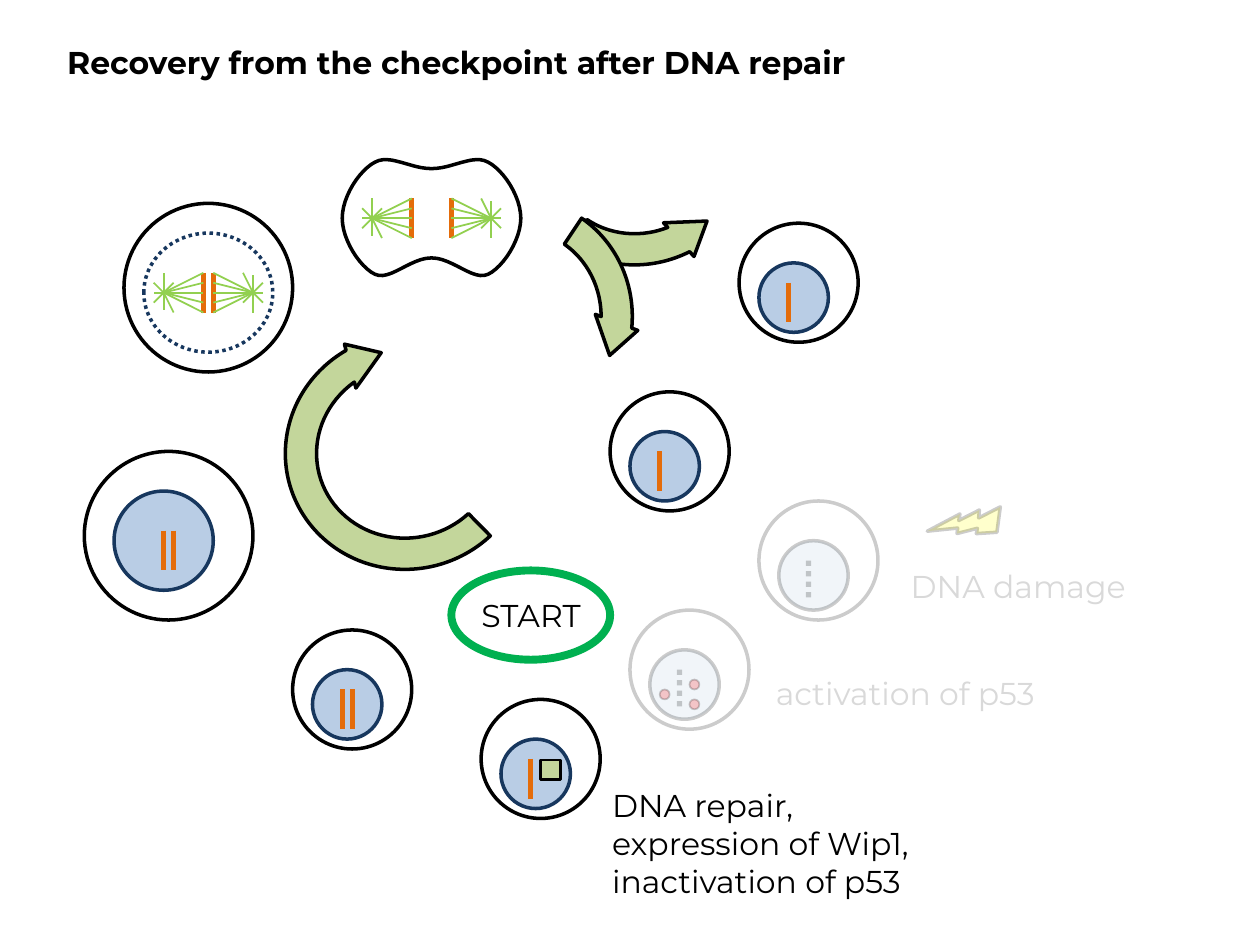
from lxml import etree
from pptx import Presentation
from pptx.dml.color import RGBColor
from pptx.enum.dml import MSO_LINE
from pptx.enum.shapes import MSO_CONNECTOR, MSO_SHAPE
from pptx.enum.text import MSO_ANCHOR, MSO_AUTO_SIZE, PP_ALIGN
from pptx.oxml.ns import qn
from pptx.util import Cm, Pt

STRAIGHT = MSO_CONNECTOR.STRAIGHT
ELLIPSE = MSO_SHAPE.OVAL
SQUARE = MSO_SHAPE.RECTANGLE
BOLT = MSO_SHAPE.LIGHTNING_BOLT
CIRCULAR_ARROW = MSO_SHAPE.CIRCULAR_ARROW
DOTTED = MSO_LINE.ROUND_DOT
LEFT = PP_ALIGN.LEFT
CENTER = PP_ALIGN.CENTER
MIDDLE = MSO_ANCHOR.MIDDLE
TOP = MSO_ANCHOR.TOP
NO_FIT = MSO_AUTO_SIZE.NONE

BLACK = "000000"
WHITE = "FFFFFF"
GREEN = "C3D69B"
ORANGE = "E46C0A"
FIBER = "92D050"
NUCLEUS = "B9CDE5"
NAVY = "17375E"
PALE = "D9D9D9"
FADED = 20

ASTER = [(0.8, 0), (0.8, 0.2), (0.8, -0.2), (0.8, 0.4), (0.8, -0.4), (0, 0.35),
         (-0.2, 0), (0.2, 0.4), (-0.2, 0.2), (-0.2, -0.2), (0, -0.4), (0.2, -0.2)]
CLEAVAGE_CENTER = 8.7
CLEAVAGE_HALF = [(0, 3.4), (-0.43, 3.4), (-0.84, 3.1), (-1.14, 3.27), (-1.45, 3.43),
                 (-1.8, 3.96), (-1.8, 4.4), (-1.8, 4.83), (-1.45, 5.38),
                 (-1.14, 5.53), (-0.84, 5.67), (-0.43, 5.2), (0, 5.2)]


def paint(color_format, color, opacity=100):
    color_format.rgb = RGBColor.from_string(color)
    if opacity < 100:
        node = color_format._xFill.find(qn("a:srgbClr"))
        etree.SubElement(node, qn("a:alpha")).set("val", str(opacity * 1000))


def write(frame, text, color=BLACK, bold=False, align=LEFT, anchor=TOP, wrap=False):
    frame.auto_size = NO_FIT
    frame.word_wrap = wrap
    frame.vertical_anchor = anchor
    frame.text = text
    for paragraph in frame.paragraphs:
        paragraph.alignment = align
        font = paragraph.runs[0].font
        font.name, font.size, font.bold = "Montserrat", Pt(18), bold
        paint(font.color, color)


def place(shape, left, top, width, height):
    shape.left, shape.top = Cm(left), Cm(top)
    shape.width, shape.height = Cm(width), Cm(height)


def curve_points(controls, steps=12):
    points = []
    for first in range(0, len(controls) - 1, 3):
        a, b, c, d = controls[first:first + 4]
        for step in range(1, steps + 1):
            t = step / steps
            s = 1 - t
            points.append(tuple(
                s**3 * a[axis] + 3 * s * s * t * b[axis] + 3 * s * t * t * c[axis] + t**3 * d[axis]
                for axis in (0, 1)))
    return points


class CellCycleDiagram:
    def __init__(self, slide):
        self.slide = slide
        self.shapes = slide.shapes

    def title(self, text, left, top, width, height):
        shape = self.shapes.title
        place(shape, left, top, width, height)
        write(shape.text_frame, text, bold=True, anchor=MIDDLE)

    def label(self, text, left, top, width, height, **style):
        shape = self.shapes.add_textbox(Cm(left), Cm(top), Cm(width), Cm(height))
        write(shape.text_frame, text, **style)

    def finish(self, shape, fill, line, weight, fill_opacity=100, line_opacity=100):
        shape.shadow.inherit = False
        if fill:
            shape.fill.solid()
            paint(shape.fill.fore_color, fill, fill_opacity)
        else:
            shape.fill.background()
        self.stroke(shape, line, weight, line_opacity)

    def stroke(self, shape, color, weight, opacity=100):
        shape.line.width = Pt(weight)
        shape.line.fill.solid()
        paint(shape.line.fill.fore_color, color, opacity)

    def shape(self, kind, left, top, width, height, fill=WHITE, line=BLACK, weight=2, **opacity):
        shape = self.shapes.add_shape(kind, Cm(left), Cm(top), Cm(width), Cm(height))
        self.finish(shape, fill, line, weight, **opacity)
        return shape

    def line(self, start, end, color, weight, opacity=100):
        connector = self.shapes.add_connector(STRAIGHT, *map(Cm, start + end))
        self.stroke(connector, color, weight, opacity)
        etree.SubElement(connector._element.spPr, qn("a:effectLst"))
        return connector

    def chromosome(self, left, top, color=ORANGE, **style):
        return self.line((left, top), (left, top + 0.8), color, 3, **style)

    def cell(self, left, top, chromosomes=1, large=False, damaged=False):
        size, core, inset, offset = (3.4, 2, 0.6, (1.6, 1.6)) if large else (2.4, 1.4, 0.4, (1, 1.2))
        opacity = FADED if damaged else 100
        self.shape(ELLIPSE, left, top, size, size, line_opacity=opacity)
        self.shape(ELLIPSE, left + inset, top + 0.8, core, core, NUCLEUS,
                   BLACK if damaged else NAVY, fill_opacity=opacity, line_opacity=opacity)
        for index in range(chromosomes):
            strand = self.chromosome(left + offset[0] + 0.2 * index, top + offset[1],
                                     BLACK if damaged else ORANGE, opacity=opacity)
            if damaged:
                strand.line.dash_style = DOTTED

    def spindle(self, left_pole, right_pole, middle):
        for pole, side in ((left_pole, 1), (right_pole, -1)):
            self.chromosome(pole + 0.8 * side, middle - 0.4)
            for x, y in ASTER:
                self.line((pole, middle), (pole + side * x, middle + side * y), FIBER, 1)

    def cycle_arrow(self, left, top, rotation, sweep_start, mirrored=False):
        arrow = self.shape(CIRCULAR_ARROW, left, top, 5.03, 5.2, GREEN)
        for index, value in enumerate((0.125, 11.423, 204.577, sweep_start, 0.091)):
            arrow.adjustments[index] = value
        arrow.rotation = rotation
        if mirrored:
            arrow._element.spPr.xfrm.set("flipH", "1")

    def dividing_cell(self):
        mirrored = [(-x, y) for x, y in reversed(CLEAVAGE_HALF)]
        points = [(Cm(CLEAVAGE_CENTER + x), Cm(y))
                  for x, y in curve_points(CLEAVAGE_HALF) + curve_points(mirrored)]
        builder = self.shapes.build_freeform(*points[-1])
        builder.add_line_segments(points, close=True)
        self.finish(builder.convert_to_shape(), WHITE, BLACK, 2)


def main():
    presentation = Presentation()
    presentation.slide_width, presentation.slide_height = Cm(25.4), Cm(19.05)
    slide = presentation.slides.add_slide(presentation.slide_layouts[5])
    diagram = CellCycleDiagram(slide)

    diagram.title("Recovery from the checkpoint after DNA repair", 1.1, 0.74, 17, 1.03)
    diagram.shape(ELLIPSE, 9.1, 11.5, 3.2, 1.8, line="00B050", weight=4.5)
    diagram.label("START", 9.17, 11.89, 3.07, 1.03, align=CENTER)

    diagram.cycle_arrow(10.36, 0.33, 227.9, 169.815, mirrored=True)
    diagram.cycle_arrow(7.85, 3.84, 20.7, 169.815)
    diagram.cycle_arrow(5.69, 6.5, 255.4, 89.97)

    for left, top in ((9.7, 14.1), (14.9, 4.5), (12.3, 7.9)):
        diagram.cell(left, top)
    diagram.cell(5.9, 12.7, chromosomes=2)
    diagram.cell(1.7, 9.1, chromosomes=2, large=True)
    diagram.shape(SQUARE, 10.9, 15.32, 0.4, 0.4, GREEN, weight=1.5)

    for left, top in ((15.3, 10.1), (12.7, 12.3)):
        diagram.cell(left, top, damaged=True)
    for left, top in ((13.3, 13.9), (13.9, 13.7), (13.9, 14.1)):
        diagram.shape(ELLIPSE, left, top, 0.2, 0.2, "FF0000", weight=1,
                      fill_opacity=FADED, line_opacity=FADED)
    bolt = diagram.shape(BOLT, 18.92, 9.92, 1.2, 1.2, "FFFF00",
                         fill_opacity=FADED, line_opacity=FADED)
    bolt.rotation = 122.2

    diagram.dividing_cell()
    diagram.spindle(7.5, 9.9, 4.4)
    diagram.shape(ELLIPSE, 2.5, 4.1, 3.4, 3.4)
    diagram.spindle(3.3, 5.1, 5.9)
    envelope = diagram.shape(ELLIPSE, 2.9, 4.7, 2.6, 2.4, None, NAVY)
    envelope.line.dash_style = DOTTED

    diagram.label("DNA damage", 18.11, 11.3, 5.03, 1.03, color=PALE)
    diagram.label("activation of p53", 15.39, 13.46, 6.53, 1.03, color=PALE)
    diagram.label("DNA repair,\nexpression of Wip1,\ninactivation of p53",
                  12.09, 15.72, 7.8, 2.57, wrap=True)
    presentation.save("out.pptx")


if __name__ == "__main__":
    main()
